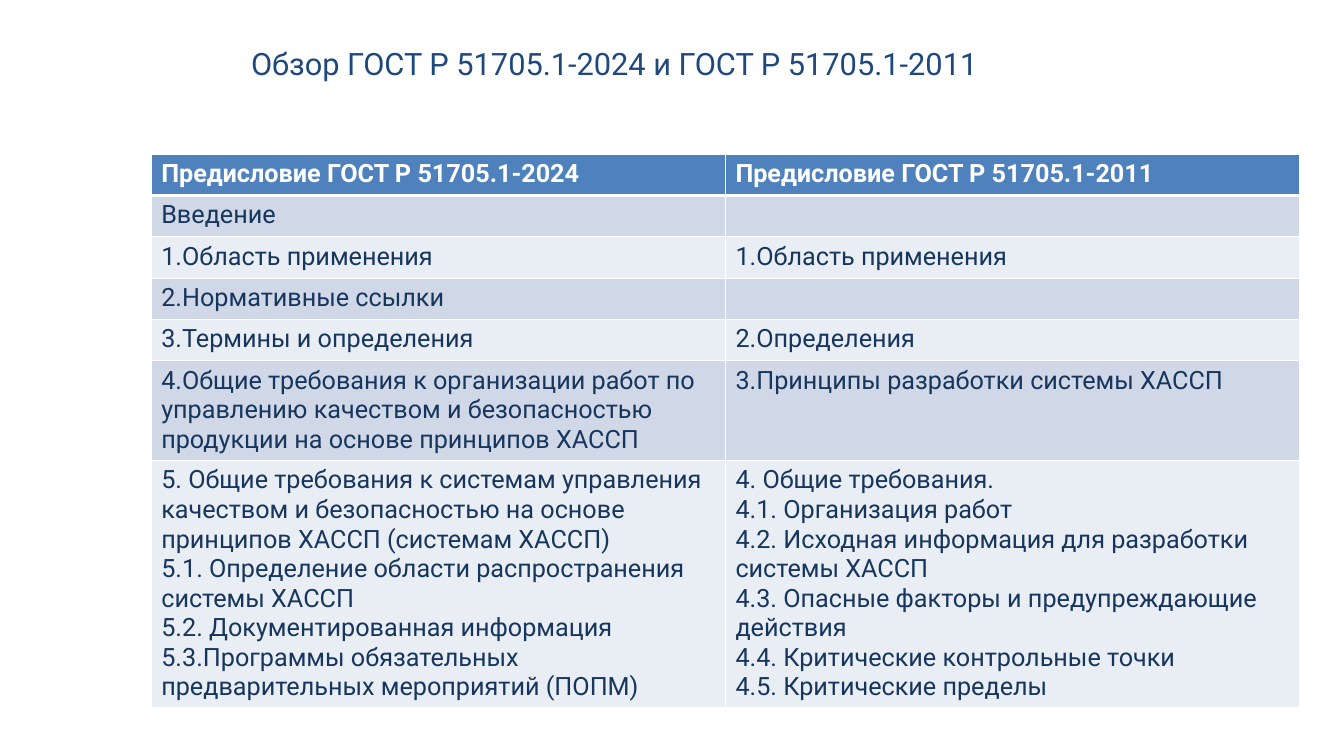
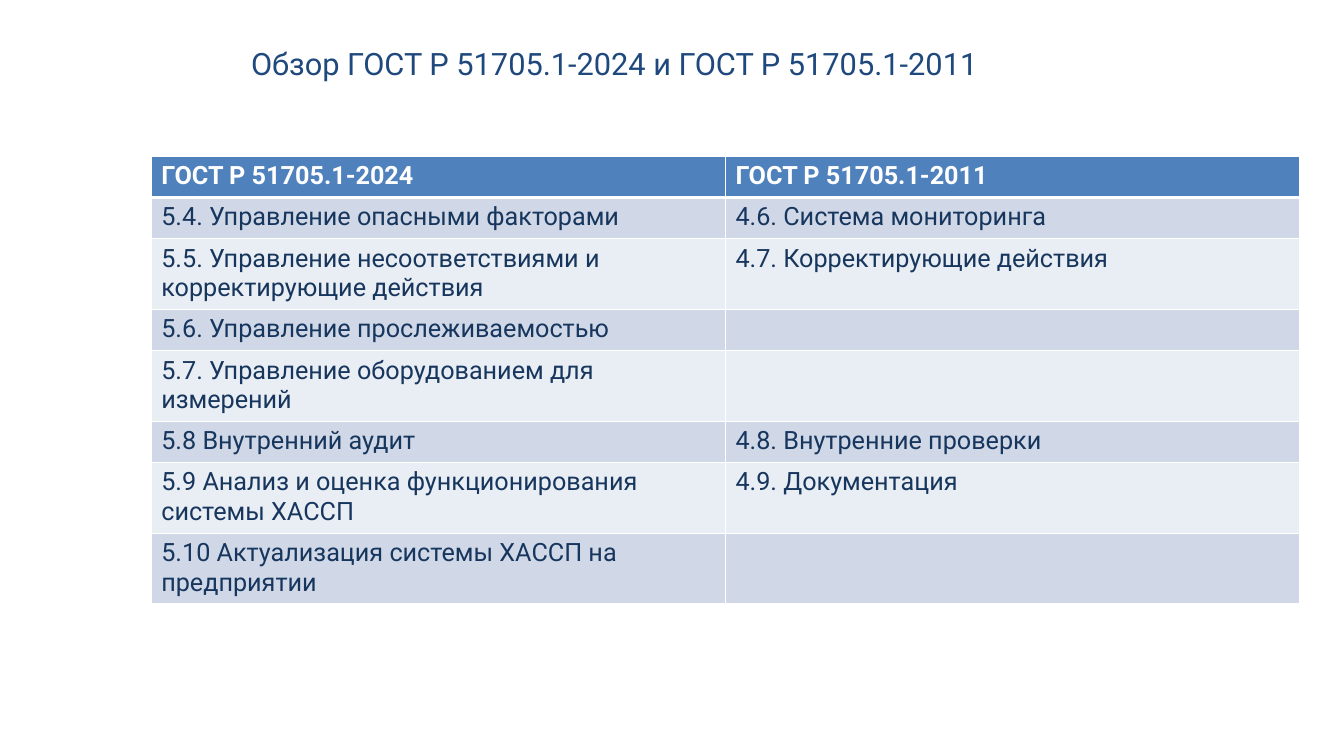
from pptx import Presentation
from pptx import util as u
from pptx.dml.color import RGBColor
from pptx.enum import text
from pptx.oxml.ns import qn
from lxml import etree

FONT = "Roboto"
COLORS = {
    "title": "1F497D",
    "body": "17365D",
    "white": "FFFFFF",
    "header": "4F81BD",
    "dark_band": "D0D8E8",
    "light_band": "E9EDF4",
}
WIDTH, HEIGHT = u.Inches(13.33), u.Inches(7.5)
TITLE = "Обзор ГОСТ Р 51705.1-2024 и ГОСТ Р 51705.1-2011"
TITLE_BOX = (u.Inches(2.39), u.Inches(0.44), u.Inches(10.5), u.Inches(0.68))
TABLE_LEFT, TABLE_WIDTH = u.Inches(1.5), u.Inches(11.39)
LINE, PADDING = u.Inches(0.29), u.Inches(0.12)

PREFACE = [
    (1, "Предисловие ГОСТ Р 51705.1-2024", "Предисловие ГОСТ Р 51705.1-2011"),
    (1, "Введение", ""),
    (1, "1.Область применения", "1.Область применения"),
    (1, "2.Нормативные ссылки", ""),
    (1, "3.Термины и определения", "2.Определения"),
    (3, "4.Общие требования к организации работ по управлению качеством "
        "и безопасностью продукции на основе принципов ХАССП",
     "3.Принципы разработки системы ХАССП"),
    (8, "5. Общие требования к системам управления качеством и безопасностью "
        "на основе принципов ХАССП (системам ХАССП)\n"
        "5.1. Определение области распространения системы ХАССП\n"
        "5.2. Документированная информация\n"
        "5.3.Программы обязательных предварительных мероприятий (ПОПМ)",
     "4. Общие требования.\n"
     "4.1. Организация работ\n"
     "4.2. Исходная информация для разработки системы ХАССП\n"
     "4.3. Опасные факторы и предупреждающие действия\n"
     "4.4. Критические контрольные точки\n"
     "4.5. Критические пределы"),
]
SECTIONS = [
    (1, "ГОСТ Р 51705.1-2024", "ГОСТ Р 51705.1-2011"),
    (1, "5.4. Управление опасными факторами", "4.6. Система мониторинга"),
    (2, "5.5. Управление несоответствиями и корректирующие действия",
     "4.7. Корректирующие действия"),
    (1, "5.6. Управление прослеживаемостью", ""),
    (2, "5.7. Управление оборудованием для измерений", ""),
    (1, "5.8 Внутренний аудит", "4.8. Внутренние проверки"),
    (2, "5.9 Анализ и оценка функционирования системы ХАССП",
     "4.9. Документация"),
    (2, "5.10 Актуализация системы ХАССП на предприятии", ""),
]


def write(tf, content, size=18, color="body", bold=False, spacing=None):
    """Write one left-aligned paragraph per line of content."""
    tf.word_wrap = True
    for i, line in enumerate(content.split("\n")):
        p = tf.add_paragraph() if i else tf.paragraphs[0]
        p.alignment = text.PP_ALIGN.LEFT
        if spacing:
            p.line_spacing = spacing
        p.font.size = u.Pt(size)
        if line:
            r = p.add_run()
            r.text = line
            r.font.name, r.font.size, r.font.bold = FONT, u.Pt(size), bold
            r.font.color.rgb = RGBColor.from_string(COLORS[color])


def set_borders(cell, bottom):
    """Draw white cell borders, with the bottom one of the given width."""
    tcPr = cell._tc.get_or_add_tcPr()
    widths = {"a:lnL": 1, "a:lnR": 1, "a:lnT": 1, "a:lnB": bottom}
    for i, (tag, width) in enumerate(widths.items()):
        ln = etree.Element(qn(tag), w=str(u.Pt(width)))
        fill = etree.SubElement(ln, qn("a:solidFill"))
        etree.SubElement(fill, qn("a:srgbClr"), val=COLORS["white"])
        tcPr.insert(i, ln)


def style_layout(layout):
    """Place the shared title on the layout."""
    title = layout.placeholders[0]
    title.left, title.top, title.width, title.height = TITLE_BOX
    title.text_frame.vertical_anchor = text.MSO_ANCHOR.TOP


def add_comparison(s, rows, left, top, width):
    """Add a two-column table with a header and banded rows."""
    heights = [PADDING + LINE * lines for lines, *_ in rows]
    table = s.shapes.add_table(len(rows), 2, left, top, width,
                               sum(heights)).table
    for column in table.columns:
        column.width = width // 2
    for i, (_, *texts) in enumerate(rows):
        table.rows[i].height = heights[i]
        header = i == 0
        band = "header" if header else "dark_band" if i % 2 else "light_band"
        for j, content in enumerate(texts):
            cell = table.cell(i, j)
            cell.fill.solid()
            cell.fill.fore_color.rgb = RGBColor.from_string(COLORS[band])
            set_borders(cell, 3 if header else 1)
            write(cell.text_frame, content, bold=header,
                  color="white" if header else "body")


def add_slide(prs, layout, rows, top):
    """Add a slide with the shared title and a comparison table."""
    s = prs.slides.add_slide(layout)
    write(s.shapes.title.text_frame, TITLE, size=22, color="title",
          spacing=0.89)
    add_comparison(s, rows, TABLE_LEFT, top, TABLE_WIDTH)


def main():
    """Build and save the presentation."""
    prs = Presentation()
    prs.slide_width, prs.slide_height = WIDTH, HEIGHT
    layout = prs.slide_layouts[5]
    style_layout(layout)
    add_slide(prs, layout, PREFACE, u.Inches(1.53))
    add_slide(prs, layout, SECTIONS, u.Inches(1.55))
    prs.save("out.pptx")


if __name__ == "__main__":
    main()
